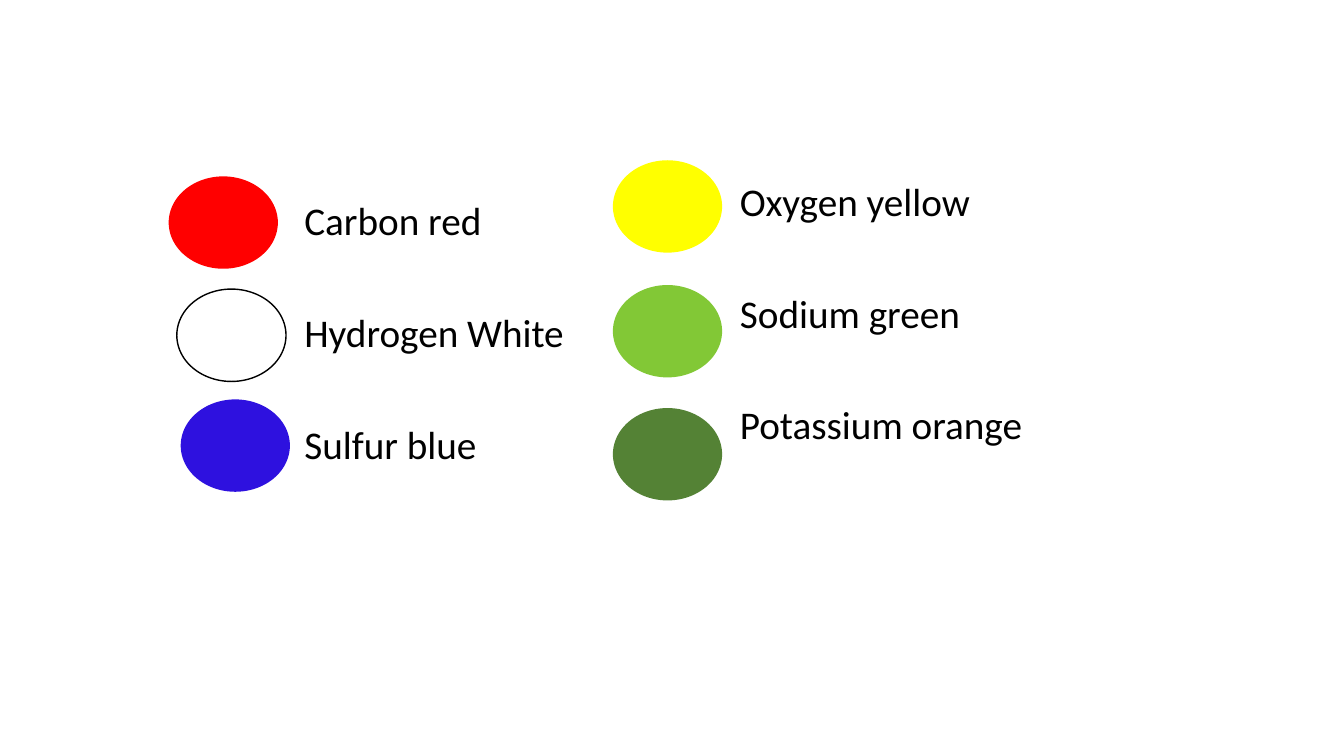
from dataclasses import dataclass

from lxml import etree
from pptx import Presentation
from pptx.dml.color import RGBColor
from pptx.enum import shapes, text
from pptx.oxml import ns
from pptx.util import Pt


@dataclass(frozen=True)
class Theme:
    font: str = "Calibri"
    size: float = 28
    black: str = "000000"
    white: str = "FFFFFF"
    red: str = "FF0000"
    blue: str = "2E11DF"
    yellow: str = "FFFF00"
    lime: str = "82C836"
    green: str = "548235"


theme = Theme()
rgb = RGBColor.from_string

deck = Presentation()
deck.slide_width, deck.slide_height = Pt(960), Pt(540)
slide = deck.slides.add_slide(deck.slide_layouts.get_by_name("Two Content"))
title, left, right = list(slide.placeholders)[:3]
for extra in list(slide.placeholders):
    if extra.placeholder_format.idx not in (1, 2):
        extra.element.getparent().remove(extra.element)

# Element names, one placeholder per column
columns = [
    (left, 210.2, 140.4, ["Carbon red", "Hydrogen White", "Sulfur blue"]),
    (right, 521.3, 126.7, ["Oxygen yellow", "Sodium green", "Potassium orange"]),
]
for body, x, y, names in columns:
    body.left, body.top, body.width, body.height = Pt(x), Pt(y), Pt(318), Pt(356.4)
    frame = body.text_frame
    frame.text = "\n".join(names)
    frame.word_wrap = True
    frame.auto_size = text.MSO_AUTO_SIZE.NONE
    frame.vertical_anchor = text.MSO_ANCHOR.TOP
    for row, para in enumerate(frame.paragraphs):
        para.line_spacing = 0.9
        para.space_before = Pt(49.6 if row else 0)
        props = para._p.get_or_add_pPr()
        props.set("marL", "0")
        props.set("indent", "0")
        etree.SubElement(props, ns.qn("a:buNone"))
        font = para.runs[0].font
        font.name, font.size = theme.font, Pt(theme.size)
        font.color.rgb = rgb(theme.black)

# Coloured atoms
atoms = [
    (120.5, 126, theme.red),
    (126.3, 206.5, theme.white),
    (129.1, 285.3, theme.blue),
    (437.8, 114.5, theme.yellow),
    (437.8, 203.6, theme.lime),
    (437.8, 291.5, theme.green),
]
for x, y, color in atoms:
    atom = slide.shapes.add_shape(
        shapes.MSO_SHAPE.OVAL, Pt(x), Pt(y), Pt(78), Pt(66))
    atom.shadow.inherit = False
    atom.fill.solid()
    atom.fill.fore_color.rgb = rgb(color)
    if color == theme.white:
        atom.line.color.rgb = rgb(theme.black)
        atom.line.width = Pt(1)
    else:
        atom.line.fill.background()

deck.save("out.pptx")
